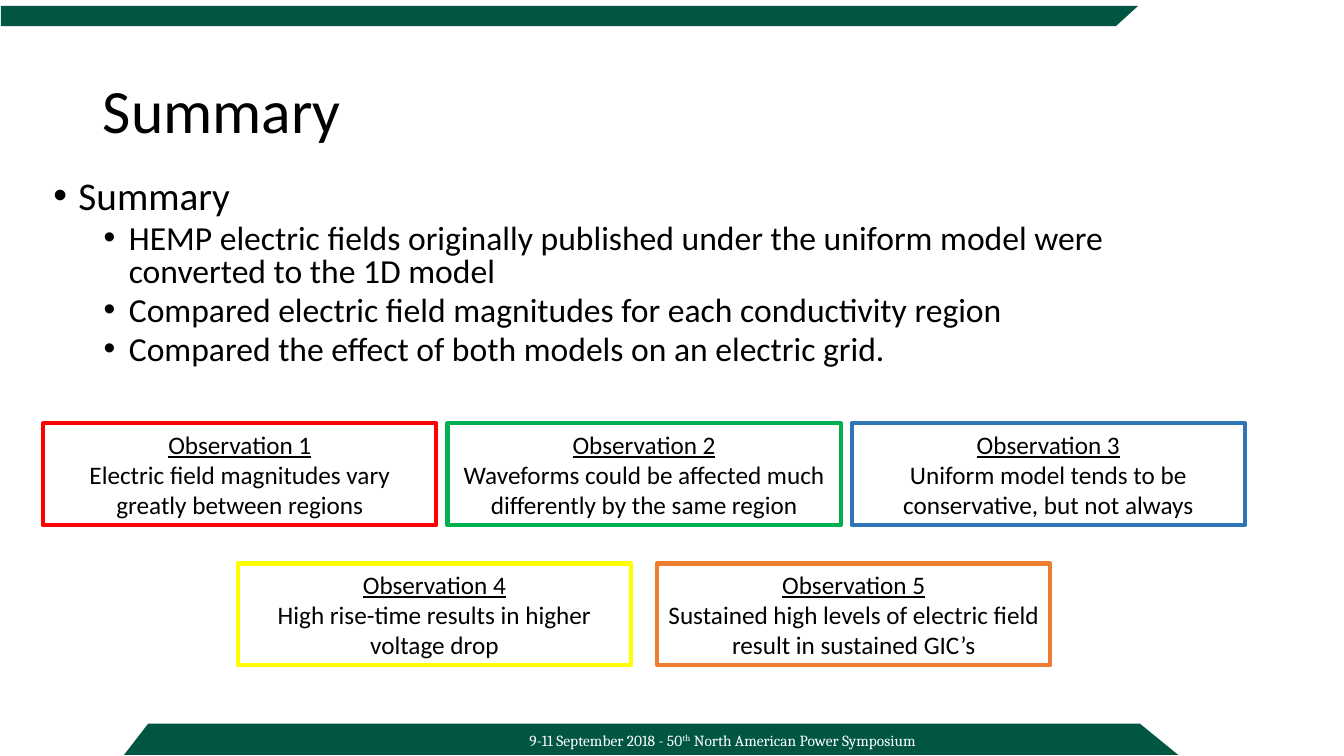
from dataclasses import dataclass

from lxml.etree import SubElement
from pptx import Presentation
from pptx.dml.color import RGBColor
from pptx.enum.shapes import MSO_SHAPE
from pptx.enum.text import MSO_ANCHOR, MSO_AUTO_SIZE, PP_ALIGN
from pptx.oxml.ns import qn
from pptx.util import Inches, Pt


@dataclass(frozen=True)
class Theme:
    """Colours, fonts and type sizes of the deck."""
    band: str = "005643"
    ink: str = "000000"
    paper: str = "FFFFFF"
    red: str = "FF0000"
    green: str = "00B050"
    blue: str = "2E75B6"
    yellow: str = "FFFF00"
    orange: str = "ED7D31"
    font: str = "Calibri"
    footer_font: str = "Cambria"
    title: int = 44
    bullet: int = 28
    sub_bullet: int = 24
    card: int = 18
    footer: int = 11
    border: int = 3


@dataclass(frozen=True)
class Box:
    """An area measured in columns and rows of the slide grid."""
    left: float
    top: float
    width: float
    height: float

    def emu(self):
        """Return left, top, width and height as lengths."""
        return [grid(n) for n in (self.left, self.top, self.width, self.height)]


THEME = Theme()
COLUMNS, ROWS = 133.33, 75
CELL = Inches(0.1)

POINTS = [
    (0, "Summary"),
    (1, "HEMP electric fields originally published under the uniform model "
        "were converted to the 1D model"),
    (1, "Compared electric field magnitudes for each conductivity region"),
    (1, "Compared the effect of both models on an electric grid."),
]
FIRST_OBSERVATIONS = [
    ("Observation 1", "Electric field magnitudes vary greatly between regions", THEME.red),
    ("Observation 2", "Waveforms could be affected much differently by the same region",
     THEME.green),
    ("Observation 3", "Uniform model tends to be conservative, but not always", THEME.blue),
]
LAST_OBSERVATIONS = [
    ("Observation 4", "High rise-time results in higher voltage drop", THEME.yellow),
    ("Observation 5", "Sustained high levels of electric field result in sustained GIC’s",
     THEME.orange),
]


def grid(cells):
    """Turn a number of grid cells into a length."""
    return round(cells * CELL)


def write(paragraph, text, size, font=THEME.font, color=THEME.ink,
          underline=False, superscript=False, align=PP_ALIGN.LEFT):
    """Add one formatted run of text to a paragraph."""
    paragraph.alignment = align
    run = paragraph.add_run()
    run.text = text
    run.font.size = Pt(size)
    run.font.name = font
    run.font.color.rgb = RGBColor.from_string(color)
    run.font.underline = underline
    if superscript:
        run._r.get_or_add_rPr().set("baseline", "30000")


def next_paragraph(frame, index):
    """Return the first paragraph of a frame, or a new one after it."""
    return frame.add_paragraph() if index else frame.paragraphs[0]


def add_bullet(paragraph, indent, hanging):
    """Give a paragraph a round bullet and a hanging indent."""
    properties = paragraph._p.get_or_add_pPr()
    properties.set("marL", str(grid(indent)))
    properties.set("indent", str(-grid(hanging)))
    SubElement(properties, qn("a:buFont")).set("typeface", "Arial")
    SubElement(properties, qn("a:buChar")).set("char", "•")


def add_band(slide, box, left_slant, right_slant):
    """Draw a green band whose ends slant by the given columns."""
    right, bottom = box.left + box.width, box.top + box.height
    corners = [(box.left + max(left_slant, 0), box.top), (right - max(right_slant, 0), box.top),
               (right + min(right_slant, 0), bottom), (box.left, bottom)]
    points = [(grid(x), grid(y)) for x, y in corners]
    builder = slide.shapes.build_freeform(*points[0])
    builder.add_line_segments(points[1:], close=True)
    band = builder.convert_to_shape()
    band.shadow.inherit = False
    band.fill.solid()
    band.fill.fore_color.rgb = RGBColor.from_string(THEME.band)
    band.line.fill.background()


def add_footer(slide, box):
    """Write the conference line on the bottom band."""
    frame = slide.shapes.add_textbox(*box.emu()).text_frame
    frame.word_wrap = True
    for text, raised in [("9-11 September 2018 - 50", False), ("th", True),
                         (" North American Power Symposium", False)]:
        write(frame.paragraphs[0], text, THEME.footer, font=THEME.footer_font,
              color=THEME.paper, superscript=raised, align=PP_ALIGN.CENTER)


def add_title(slide, box, text):
    """Place and fill the title placeholder."""
    title = slide.shapes.title
    title.left, title.top, title.width, title.height = box.emu()
    frame = title.text_frame
    frame.auto_size = MSO_AUTO_SIZE.NONE
    frame.vertical_anchor = MSO_ANCHOR.MIDDLE
    frame.paragraphs[0].line_spacing = 0.9
    write(frame.paragraphs[0], text, THEME.title)


def add_points(slide, box, points):
    """Write the two-level bullet list."""
    frame = slide.shapes.add_textbox(*box.emu()).text_frame
    frame.word_wrap = True
    for index, (level, text) in enumerate(points):
        paragraph = next_paragraph(frame, index)
        paragraph.level = level
        add_bullet(paragraph, indent=2.5 + 5 * level, hanging=2.5)
        paragraph.line_spacing = 0.8
        if index:
            paragraph.space_before = Pt(5)
        write(paragraph, text, THEME.sub_bullet if level else THEME.bullet)


def add_observation(slide, box, heading, finding, color):
    """Draw one outlined observation with its underlined heading."""
    card = slide.shapes.add_shape(MSO_SHAPE.RECTANGLE, *box.emu())
    card.shadow.inherit = False
    card.fill.background()
    card.line.color.rgb = RGBColor.from_string(color)
    card.line.width = Pt(THEME.border)
    frame = card.text_frame
    frame.word_wrap = True
    for index, text in enumerate((heading, finding)):
        write(next_paragraph(frame, index), text, THEME.card,
              underline=index == 0, align=PP_ALIGN.CENTER)


def add_observation_row(slide, box, observations, gap, card_width=39):
    """Centre a row of equally spaced observations in a box."""
    pitch = card_width + gap
    start = box.left + (box.width - len(observations) * pitch + gap) / 2
    for index, observation in enumerate(observations):
        card_box = Box(start + index * pitch, box.top, card_width, box.height)
        add_observation(slide, card_box, *observation)


def build_summary(slide):
    """Lay out the summary slide."""
    add_band(slide, Box(0.1, 0.6, 112.8, 2), left_slant=0, right_slant=-2.2)
    add_band(slide, Box(12.3, 71.8, 104.6, 3.1), left_slant=2.4, right_slant=3.8)
    add_footer(slide, Box(44, 72, 55.4, 2.9))
    add_title(slide, Box(9.2, 4, 115, 14.5), "Summary")
    add_points(slide, Box(4.3, 17.4, 119.9, 21.1), POINTS)
    add_observation_row(slide, Box(4.3, 42, 119.2, 10.1), FIRST_OBSERVATIONS, gap=1.1)
    add_observation_row(slide, Box(4.3, 55.9, 119.2, 10.1), LAST_OBSERVATIONS, gap=2.6)


def main():
    """Build and save the presentation."""
    deck = Presentation()
    deck.slide_width, deck.slide_height = grid(COLUMNS), grid(ROWS)
    build_summary(deck.slides.add_slide(deck.slide_layouts[5]))
    deck.save("out.pptx")


if __name__ == "__main__":
    main()
